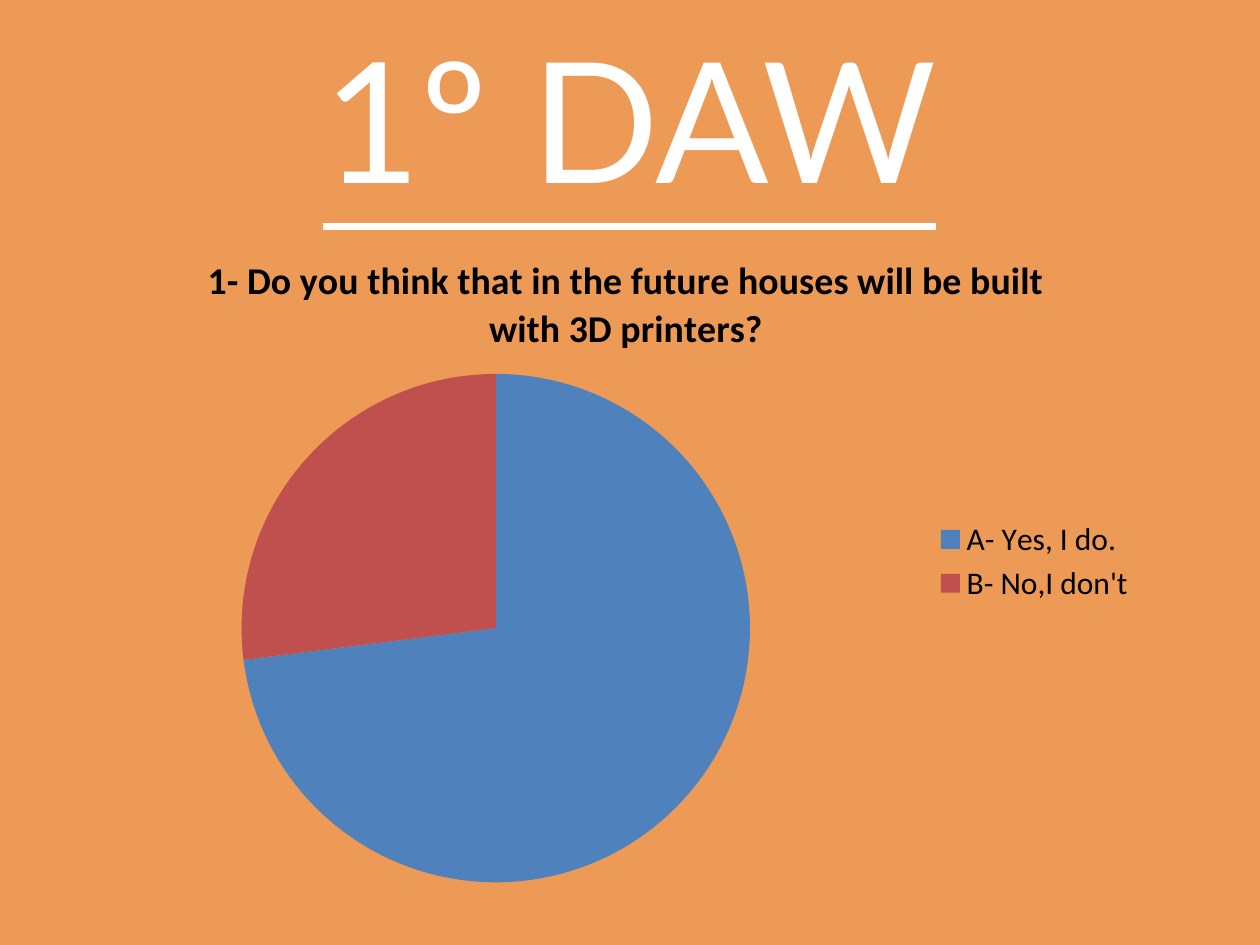
from lxml import etree
from pptx import Presentation
from pptx.chart.data import CategoryChartData as ChartData
from pptx.dml.color import RGBColor as RGB
from pptx.enum.chart import XL_CHART_TYPE as Chart, XL_LEGEND_POSITION as Side
from pptx.enum.text import MSO_ANCHOR as Anchor, PP_ALIGN as Align
from pptx.oxml.ns import qn
from pptx.util import Inches, Pt

COLORS = {
    "back": "EC9A56",
    "title": "FFFFFF",
    "text": "000000",
    "yes": "4F81BD",
    "no": "C0504D",
}


def place(parent, x, y, w, h, inner=False):
    """Fix a chart part's layout, in fractions of the chart frame."""
    layout = parent.find(qn("c:layout"))
    if layout is None:
        layout = etree.Element(qn("c:layout"))
        spot = 0 if inner else 1
        parent.insert(spot, layout)
    box = etree.SubElement(layout, qn("c:manualLayout"))
    rules = [("xMode", "edge"), ("yMode", "edge"),
             ("x", x), ("y", y), ("w", w), ("h", h)]
    if inner:
        rules.insert(0, ("layoutTarget", "inner"))
    for tag, val in rules:
        etree.SubElement(box, qn(f"c:{tag}")).set("val", str(val))


class Deck:
    def __init__(self):
        self.prs = Presentation()
        self.prs.slide_width = Inches(10)
        self.prs.slide_height = Inches(7.5)
        self.slide = self.prs.slides.add_slide(self.prs.slide_layouts[6])
        fill = self.slide.background.fill
        fill.solid()
        fill.fore_color.rgb = self.color("back")

    def color(self, name):
        return RGB.from_string(COLORS[name])

    def style(self, font, face, size, color):
        font.name = face
        font.size = Pt(size)
        font.color.rgb = self.color(color)

    def title(self, text, x, y, w, h):
        box = self.slide.shapes.add_textbox(
            Inches(x), Inches(y), Inches(w), Inches(h))
        frame = box.text_frame
        frame.word_wrap = True
        frame.vertical_anchor = Anchor.MIDDLE
        frame.text = text
        para = frame.paragraphs[0]
        para.alignment = Align.CENTER
        font = para.runs[0].font
        self.style(font, "Lato", 96, "title")
        font.underline = True

    def pie(self, ask, votes, x, y, w, h):
        """Draw votes, a list of (answer, share, color name)."""
        data = ChartData()
        data.categories = [answer for answer, _, _ in votes]
        data.add_series("Series 1", [share for _, share, _ in votes])
        chart = self.slide.shapes.add_chart(
            Chart.PIE, Inches(x), Inches(y), Inches(w), Inches(h), data).chart
        self.style(chart.font, "Calibri", 18, "text")

        chart.has_title = True
        frame = chart.chart_title.text_frame
        frame.text = ask
        font = frame.paragraphs[0].runs[0].font
        self.style(font, "Calibri", 21.6, "text")
        font.bold = True

        chart.has_legend = True
        chart.legend.position = Side.RIGHT
        chart.legend.include_in_layout = False
        place(chart.legend._element, 0.76, 0.43, 0.2, 0.14)

        plot = chart.plots[0]
        plot.vary_by_categories = True
        for i, (_, _, name) in enumerate(votes):
            fill = plot.series[0].points[i].format.fill
            fill.solid()
            fill.fore_color.rgb = self.color(name)
        area = chart._chartSpace.find(".//" + qn("c:plotArea"))
        place(area, 0.16, 0.22, 0.45, 0.76, inner=True)

    def save(self):
        self.prs.save("out.pptx")


def main():
    deck = Deck()
    deck.title("1º DAW", 0.5, 0.3, 9, 1.25)
    deck.pie(
        "1- Do you think that in the future houses will be built "
        "with 3D printers?",
        [("A- Yes, I do.", 73, "yes"), ("B- No,I don't", 27, "no")],
        0.47, 1.8, 9, 5.31)
    deck.save()


if __name__ == "__main__":
    main()
